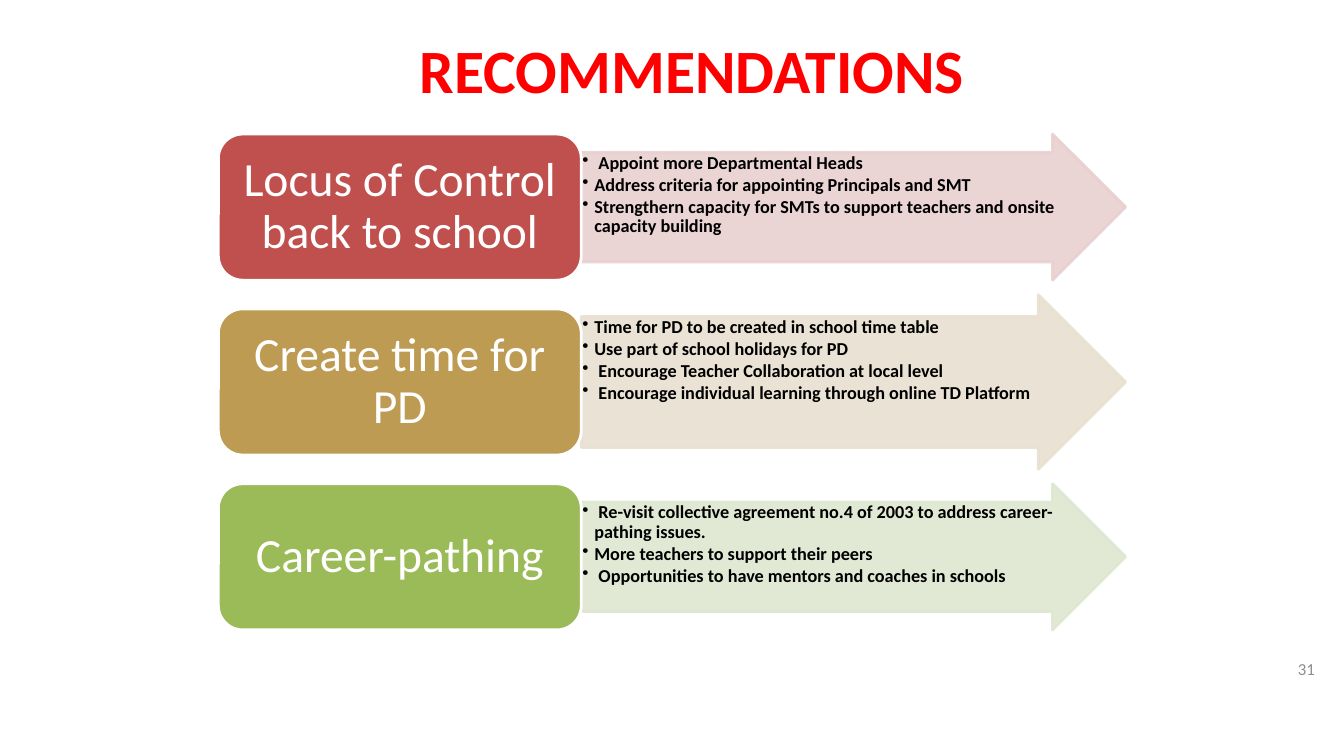
import pptx
import pptx.util
import pptx.oxml
import pptx.oxml.ns
import pptx.dml.color
import pptx.enum.shapes
import pptx.enum.text
from lxml import etree

RGB = pptx.dml.color.RGBColor
RED = RGB(0xFF, 0x00, 0x00)
WHITE = RGB(0xFF, 0xFF, 0xFF)
BLACK = RGB(0x00, 0x00, 0x00)
GREY = RGB(0x8C, 0x8C, 0x8C)
BRICK = RGB(0xC0, 0x50, 0x4D)
ROSE = RGB(0xE8, 0xD0, 0xD0)
GOLD = RGB(0xBD, 0x9B, 0x53)
SAND = RGB(0xE8, 0xE1, 0xD1)
GREEN = RGB(0x9B, 0xBB, 0x59)
MINT = RGB(0xDE, 0xE7, 0xD1)

FORM = pptx.enum.shapes.MSO_SHAPE
ALIGN = pptx.enum.text.PP_ALIGN
ANCHOR = pptx.enum.text.MSO_ANCHOR
Pt = pptx.util.Pt
Inches = pptx.util.Inches
qn = pptx.oxml.ns.qn

LEFT, MID = 16.25, 43.25
FIRST, STEP = 27.4, 23.13
HIGH = 19.33

ROWS = [
    ("Locus of Control back to school", BRICK, ROSE, HIGH, [
        " Appoint more Departmental Heads",
        "Address criteria for appointing Principals and SMT",
        "Strengthern capacity for SMTs to support teachers and onsite capacity building"]),
    ("Create time for PD", GOLD, SAND, 23.07, [
        "Time for PD to be created in school time table",
        "Use part of school holidays for PD",
        " Encourage Teacher Collaboration at local level",
        " Encourage individual learning through online TD Platform"]),
    ("Career-pathing", GREEN, MINT, HIGH, [
        " Re-visit collective agreement no.4 of 2003 to address career-pathing issues.",
        "More teachers to support their peers",
        " Opportunities to have mentors and coaches in schools"]),
]


def assign(item, values):
    for name, value in values.items():
        setattr(item, name, value)


class Deck:
    font = "Calibri"

    def __init__(self):
        self.show = pptx.Presentation()
        assign(self.show, {"slide_width": Inches(13.33), "slide_height": Inches(7.5)})
        self.slide = self.show.slides.add_slide(self.show.slide_layouts[5])

    def place(self, x, y, w, h):
        wide, high = self.show.slide_width / 100, self.show.slide_height / 100
        return [int(x * wide), int(y * high), int(w * wide), int(h * high)]

    def label(self, shape, lines, size, color, bold=False, align=ALIGN.CENTER,
              anchor=ANCHOR.MIDDLE, pad=(0.1, 0.05), space=1.0, after=0, dots=False):
        frame = shape.text_frame
        assign(frame, {
            "word_wrap": True, "auto_size": pptx.enum.text.MSO_AUTO_SIZE.NONE,
            "vertical_anchor": anchor,
            "margin_left": Inches(pad[0]), "margin_right": Inches(pad[0]),
            "margin_top": Inches(pad[1]), "margin_bottom": Inches(pad[1])})
        for index, line in enumerate(lines):
            para = frame.add_paragraph() if index else frame.paragraphs[0]
            if dots:
                self.bullet(para)
            assign(para, {"alignment": align, "line_spacing": space,
                          "space_before": Pt(0), "space_after": Pt(after)})
            run = para.add_run()
            run.text = line
            assign(run.font, {"name": self.font, "size": Pt(size), "bold": bold})
            run.font.color.rgb = color

    def bullet(self, para):
        props = para._p.get_or_add_pPr()
        props.set("marL", str(Inches(0.12)))
        props.set("indent", str(-Inches(0.12)))
        etree.SubElement(props, qn("a:buChar")).set("char", "•")

    def title(self, text):
        head = self.slide.shapes.title
        names = ("left", "top", "width", "height")
        assign(head, dict(zip(names, self.place(6.5, 4, 90, 10.27))))
        self.label(head, [text], 44, RED, bold=True)

    def shape(self, form, box, fill, line, alpha=100):
        shape = self.slide.shapes.add_shape(form, *self.place(*box))
        shape.shadow.inherit = False
        shape.fill.solid()
        shape.fill.fore_color.rgb = fill
        shape.line.color.rgb = line
        shape.line.width = Pt(2)
        if alpha < 100:
            for color in shape._element.spPr.iter(qn("a:srgbClr")):
                etree.SubElement(color, qn("a:alpha")).set("val", str(alpha * 1000))
        return shape

    def arrow(self, center, high, fill, lines):
        arrow = self.shape(FORM.RIGHT_ARROW, (MID, center - high / 2, 40.5, high),
                           fill, fill, 90)
        arrow.adjustments[0] = 0.75
        arrow.adjustments[1] = 0.5
        self.label(arrow, lines, 13, BLACK, bold=True, align=ALIGN.LEFT,
                   anchor=ANCHOR.TOP, pad=(0.01, 0.01), space=0.9, after=1.7, dots=True)

    def card(self, center, fill, text):
        card = self.shape(FORM.ROUNDED_RECTANGLE,
                          (LEFT, center - HIGH / 2, MID - LEFT, HIGH), fill, WHITE)
        self.label(card, [text], 34, WHITE, pad=(0.14, 0.07), space=0.9)

    def number(self, text):
        box = self.slide.shapes.add_textbox(*self.place(75.25, 85.73, 23.33, 5.33))
        self.label(box, [text], 12, GREY, align=ALIGN.RIGHT)


def main():
    deck = Deck()
    deck.title("RECOMMENDATIONS")
    for index, (name, dark, light, high, lines) in enumerate(ROWS):
        center = FIRST + index * STEP
        deck.arrow(center, high, light, lines)
        deck.card(center, dark, name)
    deck.number("31")
    deck.show.save("out.pptx")


if __name__ == "__main__":
    main()
